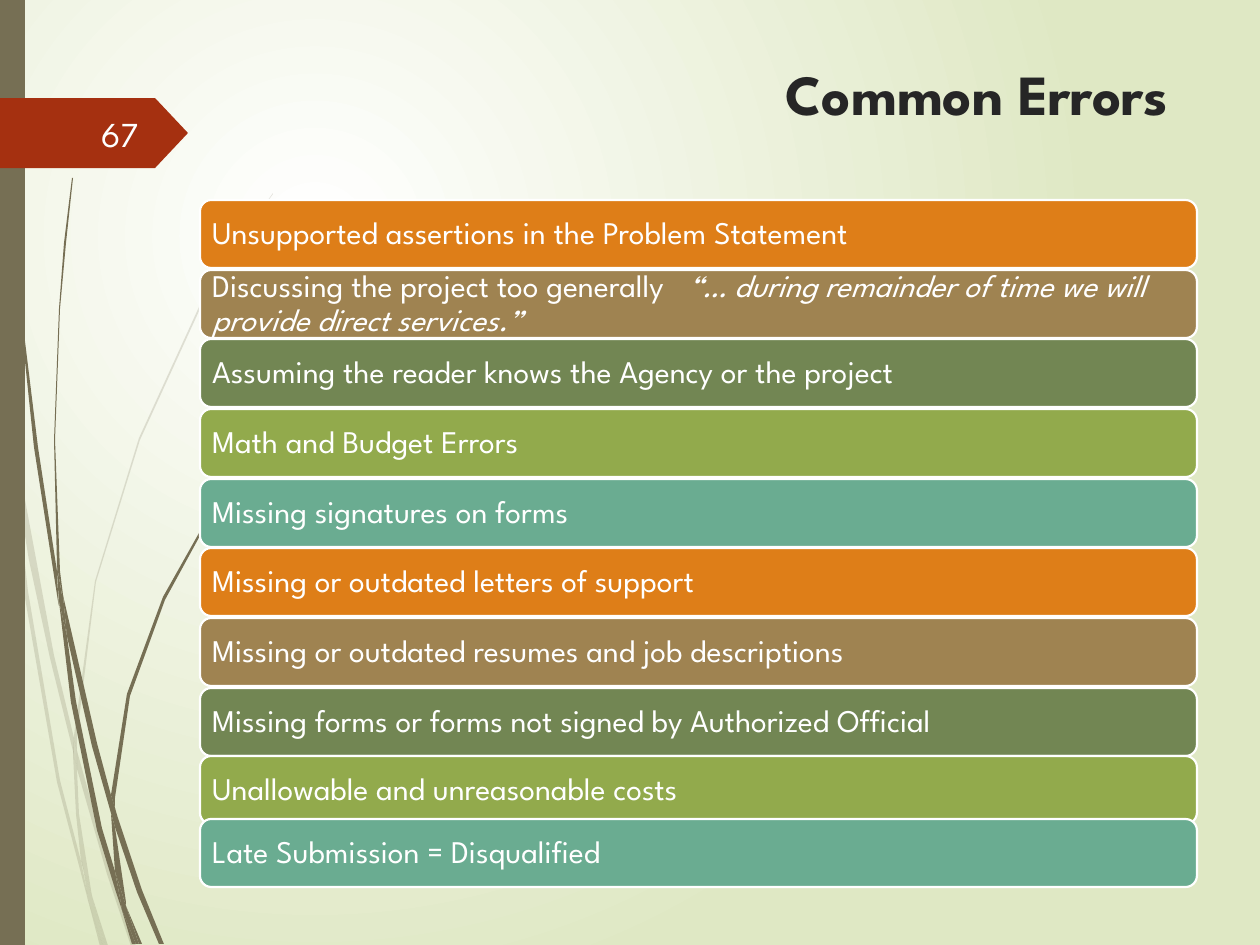
from dataclasses import dataclass
from typing import Optional

import pptx
import pptx.dml.color
import pptx.enum.shapes
import pptx.enum.text
import pptx.oxml
import pptx.oxml.ns
import pptx.util
from lxml import etree

EMU_PER_PX = 914400 / 126
SHAPES = pptx.enum.shapes.MSO_SHAPE
ALIGN = pptx.enum.text.PP_ALIGN
ANCHOR = pptx.enum.text.MSO_ANCHOR
qn = pptx.oxml.ns.qn


@dataclass(frozen=True)
class Theme:
    font: str = "League Spartan"
    title_size: float = 32.4
    number_size: float = 20
    entry_size: float = 18
    ink: str = "262626"
    white: str = "FFFFFF"
    number: str = "FEFFFF"
    glow_edge: str = "DFE8C4"
    stem: str = "766F54"
    marker: str = "A53010"
    bars: tuple[str, ...] = ("DE7E18", "9F8351", "728653", "92AA4C", "6AAC91")


@dataclass(frozen=True)
class Box:
    left: int
    top: int
    width: int
    height: int

    def emu(self) -> tuple[int, ...]:
        return tuple(px(v) for v in (self.left, self.top, self.width, self.height))


@dataclass(frozen=True)
class Tuft:
    blades: tuple[tuple[tuple[int, int], ...], ...]
    opacity: Optional[int] = None


@dataclass(frozen=True)
class Entry:
    text: str
    quote: str = ""


THEME = Theme()

PALE_TUFT = Tuft((
    ((10, 441), (8, 406), (0, 355), (0, 377), (9, 433)),
    ((50, 658), (74, 755), (74, 738), (54, 655), (13, 435), (15, 474), (29, 560)),
    ((81, 765), (77, 751), (77, 769), (107, 874), (131, 946), (136, 946), (111, 872)),
    ((105, 946), (108, 946), (92, 896)),
    ((81, 861), (60, 780), (28, 591), (15, 474), (10, 441), (24, 592), (57, 782),
     (81, 873), (88, 900), (87, 891)),
    ((73, 755), (76, 814), (81, 861), (84, 872), (92, 896), (91, 890), (79, 814),
     (77, 769), (77, 766)),
    ((77, 736), (96, 582), (140, 440), (200, 309), (236, 249), (253, 221), (273, 194),
     (273, 193), (253, 221), (234, 248), (199, 307), (139, 438), (95, 581), (74, 736),
     (74, 738), (77, 751)),
    ((88, 900), (100, 946), (103, 946)),
    ((77, 766), (77, 769), (77, 751), (74, 738), (73, 755)),
    ((84, 872), (82, 861), (87, 891), (88, 900), (103, 946), (105, 946), (92, 896)),
), opacity=20)

DARK_TUFT = Tuft((
    ((6, 139), (18, 294), (34, 447), (58, 601), (59, 606), (57, 576), (57, 571),
     (38, 447), (19, 292), (8, 137), (5, 60), (4, 0), (3, 0), (4, 60)),
    ((92, 746), (111, 813), (111, 795), (97, 743), (63, 595), (67, 636)),
    ((118, 818), (115, 808), (115, 827), (137, 892), (159, 944), (164, 944), (142, 890)),
    ((115, 871), (102, 828), (76, 701), (67, 636), (59, 601), (71, 702), (97, 830),
     (116, 892), (122, 910), (121, 903)),
    ((63, 595), (60, 571), (55, 440), (60, 309), (66, 243), (73, 178), (72, 178),
     (64, 243), (59, 309), (54, 440), (57, 566), (62, 595)),
    ((139, 944), (142, 944), (126, 906)),
    ((59, 601), (67, 636), (63, 595), (62, 595), (57, 566), (57, 571)),
    ((115, 798), (130, 696), (165, 600), (213, 512), (241, 471), (256, 452), (272, 433),
     (271, 433), (256, 451), (241, 470), (212, 510), (163, 597), (127, 694), (111, 795),
     (115, 808)),
    ((122, 910), (132, 944), (136, 944)),
    ((111, 813), (115, 871), (121, 890), (126, 906), (126, 902), (115, 827), (113, 820)),
    ((111, 813), (113, 820), (115, 827), (115, 808), (111, 795), (111, 798)),
    ((115, 871), (121, 903), (122, 910), (136, 944), (139, 944), (126, 906), (121, 890)),
))

ENTRIES = (
    Entry("Unsupported assertions in the Problem Statement"),
    Entry("Discussing the project too generally",
          "“… during remainder of time we will provide direct services.”"),
    Entry("Assuming the reader knows the Agency or the project"),
    Entry("Math and Budget Errors"),
    Entry("Missing signatures on forms"),
    Entry("Missing or outdated letters of support"),
    Entry("Missing or outdated resumes and job descriptions"),
    Entry("Missing forms or forms not signed by Authorized Official"),
    Entry("Unallowable and unreasonable costs"),
    Entry("Late Submission = Disqualified"),
)
BAR_TOPS = [round(200 + 69.7 * row) for row in range(8)] + [756, 819]
QUOTE_TAB = 476


def px(value: float) -> int:
    return round(value * EMU_PER_PX)


def rgb(color: str) -> pptx.dml.color.RGBColor:
    return pptx.dml.color.RGBColor.from_string(color)


def paint(shape, color: str, outline: Optional[str] = None) -> None:
    shape.shadow.inherit = False
    shape.fill.solid()
    shape.fill.fore_color.rgb = rgb(color)
    if outline:
        shape.line.color.rgb = rgb(outline)
        shape.line.width = pptx.util.Pt(1.25)
    else:
        shape.line.fill.background()


def write(paragraph, text: str, size: float, color: str, bold=False, italic=False) -> None:
    run = paragraph.add_run()
    run.text = text
    run.font.name = THEME.font
    run.font.size = pptx.util.Pt(size)
    run.font.color.rgb = rgb(color)
    run.font.bold = bold
    run.font.italic = italic


def draw_background(slide) -> None:
    glow = slide.background.fill
    glow.gradient()
    for stop, color in zip(glow.gradient_stops, (THEME.white, THEME.glow_edge)):
        stop.color.rgb = rgb(color)
    gradient = slide.element.find(".//" + qn("a:gradFill"))
    gradient.remove(gradient.find(qn("a:lin")))
    circle = etree.SubElement(gradient, qn("a:path"), {"path": "circle"})
    etree.SubElement(circle, qn("a:fillToRect"),
                     {"l": "50000", "t": "50000", "r": "100000", "b": "100000"})


def draw_tuft(slide, tuft: Tuft) -> None:
    for blade in tuft.blades:
        start, *rest = [(px(x), px(y)) for x, y in blade]
        builder = slide.shapes.build_freeform(*start, scale=1.0)
        builder.add_line_segments(rest, close=True)
        stem = builder.convert_to_shape()
        paint(stem, THEME.stem)
        if tuft.opacity:
            color = stem.element.spPr.find(".//" + qn("a:srgbClr"))
            etree.SubElement(color, qn("a:alpha"), {"val": str(tuft.opacity * 1000)})


def draw_marker(slide, number: str) -> None:
    edge = slide.shapes.add_shape(SHAPES.RECTANGLE, *Box(0, 0, 25, 945).emu())
    paint(edge, THEME.stem)
    arrow = slide.shapes.add_shape(SHAPES.PENTAGON, *Box(0, 98, 188, 70).emu())
    arrow.adjustments[0] = 0.47
    paint(arrow, THEME.marker)
    frame = slide.shapes.add_textbox(*Box(71, 109, 80, 50).emu()).text_frame
    frame.word_wrap = True
    frame.vertical_anchor = ANCHOR.MIDDLE
    frame.paragraphs[0].alignment = ALIGN.RIGHT
    write(frame.paragraphs[0], number, THEME.number_size, THEME.number)


def draw_title(slide, text: str) -> None:
    title = slide.shapes.title
    title.left, title.top, title.width, title.height = Box(693, 53, 488, 103).emu()
    title.text_frame.vertical_anchor = ANCHOR.TOP
    heading = title.text_frame.paragraphs[0]
    heading.alignment = ALIGN.RIGHT
    write(heading, text, THEME.title_size, THEME.ink, bold=True)


def draw_entry(slide, entry: Entry, top: int, color: str) -> None:
    bar = slide.shapes.add_shape(SHAPES.ROUNDED_RECTANGLE, *Box(200, top, 997, 68).emu())
    paint(bar, color, THEME.white)
    frame = bar.text_frame
    frame.word_wrap = True
    frame.vertical_anchor = ANCHOR.MIDDLE
    frame.margin_left = frame.margin_right = px(9)
    frame.margin_top = frame.margin_bottom = px(9)
    line = frame.paragraphs[0]
    line.alignment = ALIGN.LEFT
    line.line_spacing = 0.9
    write(line, entry.text, THEME.entry_size, THEME.white)
    if entry.quote:
        tabs = etree.SubElement(line._p.get_or_add_pPr(), qn("a:tabLst"))
        etree.SubElement(tabs, qn("a:tab"), {"pos": str(px(QUOTE_TAB)), "algn": "l"})
        write(line, "\t" + entry.quote, THEME.entry_size, THEME.white, italic=True)


def main() -> None:
    deck = pptx.Presentation()
    deck.slide_width, deck.slide_height = px(1260), px(945)
    slide = deck.slides.add_slide(deck.slide_layouts[5])
    draw_background(slide)
    for tuft in (PALE_TUFT, DARK_TUFT):
        draw_tuft(slide, tuft)
    draw_marker(slide, "67")
    draw_title(slide, "Common Errors")
    for row, (entry, top) in enumerate(zip(ENTRIES, BAR_TOPS)):
        draw_entry(slide, entry, top, THEME.bars[row % len(THEME.bars)])
    deck.save("out.pptx")


if __name__ == "__main__":
    main()
